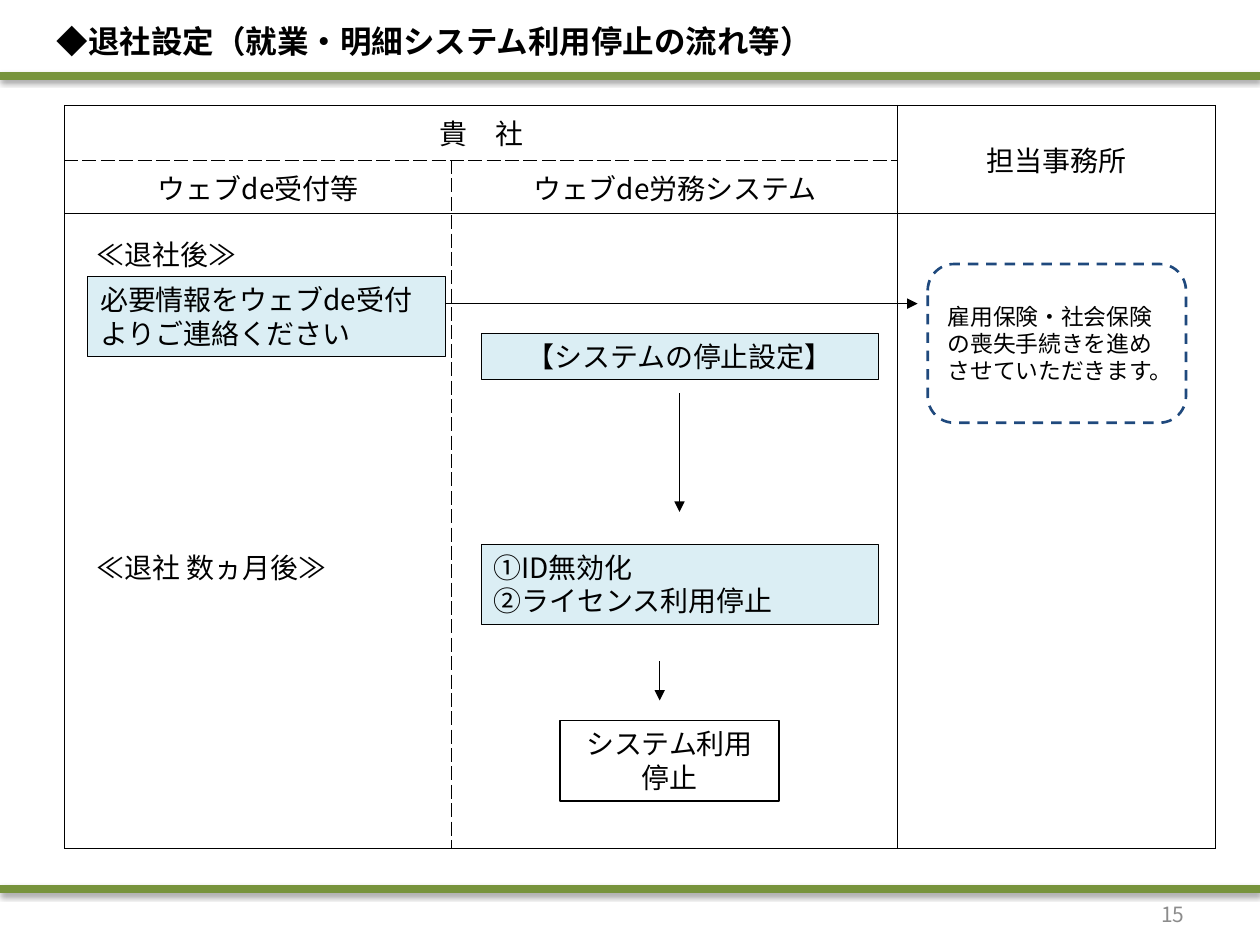
from lxml.etree import SubElement
from pptx import Presentation
from pptx.dml.color import RGBColor
from pptx.enum.dml import MSO_LINE
from pptx.enum.shapes import MSO_CONNECTOR, MSO_SHAPE
from pptx.enum.text import MSO_ANCHOR as ANC, PP_ALIGN as AL
from pptx.oxml.ns import qn
from pptx.util import Pt

FONT = "Noto Sans CJK JP"
COLORS = {"ink": "000000", "green": "77933C", "pale": "DBEEF4",
          "navy": "1F497D", "white": "FFFFFF", "gray": "8C8C8C"}
TITLE = "◆退社設定（就業・明細システム利用停止の流れ等）"
PAGE = "15"
BANDS = [43.2, 508]
TABLE_AT = (36.9, 60.2)
COLS = [221.2, 255, 181.4]
ROWS = [31.4, 30.4, 362.9]
HEADERS = [(0, 0, "貴　社"), (0, 2, "担当事務所"),
           (1, 0, "ウェブde受付等"), (1, 1, "ウェブde労務システム")]
SOLID, DASHED = (0.75, "solid"), (0.25, "sysDash")
LABELS = [("≪退社後≫", 48.2, 132.5, 102.2, 26.6),
          ("≪退社 数ヵ月後≫", 48.2, 311, 158.4, 26.6)]
BOXES = [
    (["①ID無効化", "②ライセンス利用停止"], 275, 311, 226.8, 46, "pale", 0.5, AL.LEFT),
    (["システム利用停止"], 320.2, 411.8, 124.8, 46, None, 1, AL.CENTER),
    (["【システムの停止設定】"], 275, 190.5, 226.8, 26.6, "pale", 0.5, AL.CENTER),
    (["必要情報をウェブde受付よりご連絡ください"], 50.2, 157.9, 204.2, 46, "pale", 0.5, AL.LEFT),
]
NOTE = "雇用保険・社会保険の喪失手続きを進めさせていただきます。"
ARROWS = [(377, 377.8, 377, 400.3), (223.9, 173.5, 524.4, 173.5),
          (388.3, 224.6, 388.3, 292.5)]


def rgb(name):
    return RGBColor.from_string(COLORS[name])


def write(tf, lines, size=16, color="ink", align=AL.LEFT, anchor=ANC.TOP, bold=False):
    tf.word_wrap = True
    tf.vertical_anchor = anchor
    for i, line in enumerate(lines):
        p = tf.add_paragraph() if i else tf.paragraphs[0]
        p.alignment = align
        r = p.add_run()
        r.text = line
        r.font.size = Pt(size)
        r.font.bold = bold
        r.font.name = FONT
        r.font.color.rgb = rgb(color)
        SubElement(r.font._element, qn("a:ea"), typeface=FONT)


def add_label(text, x, y, w, h, **style):
    sp = s.shapes.add_textbox(Pt(x), Pt(y), Pt(w), Pt(h))
    write(sp.text_frame, [text], **style)


def add_box(kind, x, y, w, h, fill, line, width):
    sp = s.shapes.add_shape(kind, Pt(x), Pt(y), Pt(w), Pt(h))
    sp.shadow.inherit = False
    if fill:
        sp.fill.solid()
        sp.fill.fore_color.rgb = rgb(fill)
    else:
        sp.fill.background()
    sp.line.color.rgb = rgb(line)
    sp.line.width = Pt(width)
    return sp


def add_line(x1, y1, x2, y2, color, width):
    cx = s.shapes.add_connector(MSO_CONNECTOR.STRAIGHT, Pt(x1), Pt(y1), Pt(x2), Pt(y2))
    cx.line.color.rgb = rgb(color)
    cx.line.width = Pt(width)
    return cx, SubElement(cx._element.spPr, qn("a:effectLst"))


def set_border(cell, side, width, dash):
    ln = SubElement(cell._tc.get_or_add_tcPr(), qn("a:" + side), w=str(Pt(width)))
    fill = SubElement(ln, qn("a:solidFill"))
    SubElement(fill, qn("a:srgbClr"), val=COLORS["ink"])
    SubElement(ln, qn("a:prstDash"), val=dash)


prs = Presentation()
prs.slide_width, prs.slide_height = Pt(720), Pt(540)
s = prs.slides.add_slide(prs.slide_layouts[5])

for y in BANDS:
    cx, effects = add_line(0, y, 720, y, "green", 4.5)
    shadow = SubElement(effects, qn("a:outerShdw"), blurRad=str(Pt(3.1)),
                        dist=str(Pt(1.6)), dir="5400000", rotWithShape="0")
    tint = SubElement(shadow, qn("a:srgbClr"), val=COLORS["ink"])
    SubElement(tint, qn("a:alpha"), val="38000")

title = s.shapes.title
title.left, title.top, title.width, title.height = Pt(25.2), Pt(9), Pt(647.3), Pt(39.6)
write(title.text_frame, [TITLE], size=18, bold=True)

frame = s.shapes.add_table(len(ROWS), len(COLS), *map(Pt, TABLE_AT),
                           Pt(sum(COLS)), Pt(sum(ROWS)))
table = frame.table
table.first_row = table.horz_banding = False
for col, w in zip(table.columns, COLS):
    col.width = Pt(w)
for row, h in zip(table.rows, ROWS):
    row.height = Pt(h)
for i in range(len(ROWS)):
    for j in range(len(COLS)):
        cell = table.cell(i, j)
        borders = {
            "lnL": DASHED if j == 1 else SOLID,
            "lnR": DASHED if j == 0 else SOLID,
            "lnT": DASHED if i == 1 and j < 2 else SOLID,
            "lnB": DASHED if i == 0 and j < 2 else SOLID,
        }
        for side, (width, dash) in borders.items():
            set_border(cell, side, width, dash)
        cell.fill.background()
table.cell(0, 0).merge(table.cell(0, 1))
table.cell(0, 2).merge(table.cell(1, 2))
for i, j, text in HEADERS:
    cell = table.cell(i, j)
    write(cell.text_frame, [text], align=AL.CENTER)
    cell.vertical_anchor = ANC.MIDDLE

for ends in ARROWS:
    cx, effects = add_line(*ends, "ink", 0.75)
    SubElement(cx.line._get_or_add_ln(), qn("a:tailEnd"), type="triangle")

add_label(PAGE, 516.2, 508, 167.8, 28.8, size=12, color="gray",
          align=AL.RIGHT, anchor=ANC.MIDDLE)
for label in LABELS:
    add_label(*label)
for lines, x, y, w, h, fill, width, align in BOXES:
    sp = add_box(MSO_SHAPE.RECTANGLE, x, y, w, h, fill, "ink", width)
    write(sp.text_frame, lines, align=align)

note = add_box(MSO_SHAPE.ROUNDED_RECTANGLE, 530.1, 150.9, 147.6, 90.7, "white", "navy", 1.5)
note.line.dash_style = MSO_LINE.DASH
write(note.text_frame, [NOTE], size=13, anchor=ANC.MIDDLE)
note.text_frame.paragraphs[0].space_before = Pt(6)

prs.save("out.pptx")
